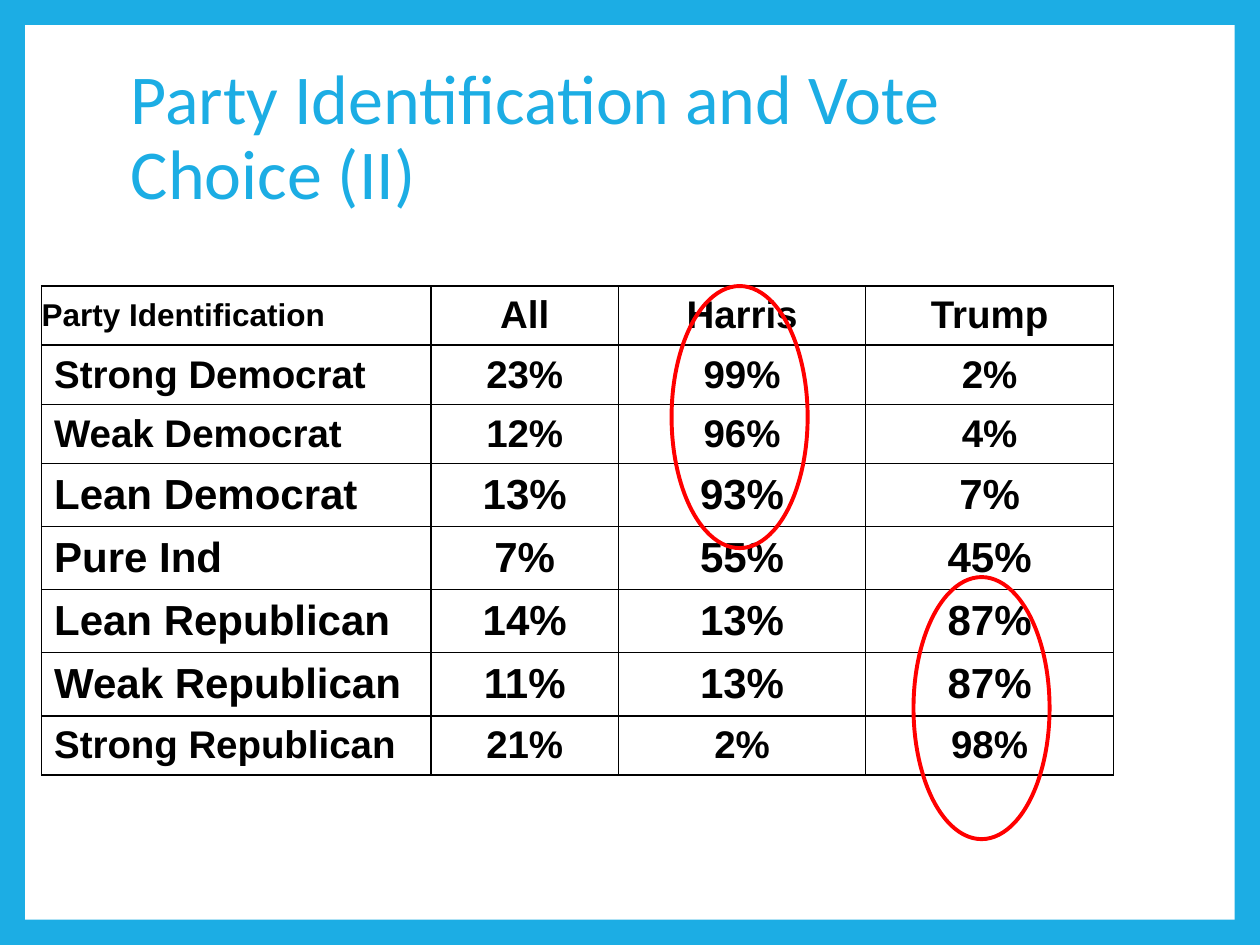
from lxml import etree
from pptx import Presentation
from pptx import util as u
from pptx.dml.color import RGBColor
from pptx.enum import shapes, text
from pptx.oxml.ns import qn

BLUE, WHITE, BLACK, RED = "1CADE4", "FFFFFF", "000000", "FF0000"

COLUMN_WIDTHS = [3.09, 1.49, 1.96, 1.97]
# Label, all voters, Harris, Trump, text size, row height
VOTE_ROWS = [
    ("Party Identification", "All", "Harris", "Trump", 22, 0.47),
    ("Strong Democrat", "23%", "99%", "2%", 22, 0.47),
    ("Weak Democrat", "12%", "96%", "4%", 22, 0.47),
    ("Lean Democrat", "13%", "93%", "7%", 24, 0.5),
    ("Pure Ind", "7%", "55%", "45%", 24, 0.5),
    ("Lean Republican", "14%", "13%", "87%", 24, 0.5),
    ("Weak Republican", "11%", "13%", "87%", 24, 0.5),
    ("Strong Republican", "21%", "2%", "98%", 22, 0.47),
]


def color(hex_string):
    return RGBColor.from_string(hex_string)


def inches(*lengths):
    return [u.Inches(length) for length in lengths]


class Deck:
    title_font, table_font = "Calibri", "Arial"

    def __init__(self, width, height):
        self.presentation = Presentation()
        self.presentation.slide_width = u.Inches(width)
        self.presentation.slide_height = u.Inches(height)
        self.slide = self.presentation.slides.add_slide(self.presentation.slide_layouts[6])

    def background(self, fill):
        self.slide.background.fill.solid()
        self.slide.background.fill.fore_color.rgb = color(fill)

    def panel(self, fill, *box):
        panel = self.slide.shapes.add_shape(shapes.MSO_SHAPE.RECTANGLE, *inches(*box))
        panel.shadow.inherit = False
        panel.fill.solid()
        panel.fill.fore_color.rgb = color(fill)
        panel.line.fill.background()

    def title(self, wording, *box):
        frame = self.slide.shapes.add_textbox(*inches(*box)).text_frame
        frame.word_wrap = True
        frame.vertical_anchor = text.MSO_ANCHOR.MIDDLE
        frame.margin_bottom = u.Inches(0.66)  # lifts the title by half a line
        heading = frame.paragraphs[0]
        heading.text = wording
        heading.line_spacing = 0.9
        self.style(heading.font, self.title_font, 40, BLUE)

    def style(self, font, name, size, hex_string, bold=False):
        font.name, font.size, font.bold = name, u.Pt(size), bold
        font.color.rgb = color(hex_string)

    def cell(self, cell, wording, size, centred):
        cell.vertical_anchor = text.MSO_ANCHOR.MIDDLE
        cell.text = wording
        entry = cell.text_frame.paragraphs[0]
        entry.alignment = text.PP_ALIGN.CENTER if centred else text.PP_ALIGN.LEFT
        self.style(entry.font, self.table_font, size, BLACK, bold=True)
        # Hanging indent
        properties = entry._p.get_or_add_pPr()
        properties.set("marL", str(u.Inches(0.38)))
        properties.set("indent", str(-u.Inches(0.38)))
        # Borders come before the fill in the cell properties
        cell_properties = cell._tc.get_or_add_tcPr()
        for side in ("lnL", "lnR", "lnT", "lnB"):
            border = etree.SubElement(cell_properties, qn(f"a:{side}"), w=str(u.Pt(1)))
            fill = etree.SubElement(border, qn("a:solidFill"))
            etree.SubElement(fill, qn("a:srgbClr"), val=BLACK)
        cell.fill.background()

    def table(self, rows, widths, left, top):
        heights = [row[-1] for row in rows]
        box = inches(left, top, sum(widths), sum(heights))
        table = self.slide.shapes.add_table(len(rows), len(widths), *box).table
        table.first_row = table.horz_banding = False
        for column, width in zip(table.columns, widths):
            column.width = u.Inches(width)
        for r, (*entries, size, height) in enumerate(rows):
            table.rows[r].height = u.Inches(height)
            for c, entry in enumerate(entries):
                self.cell(table.cell(r, c), entry, size, centred=c > 0)
        return table

    def ring(self, left, top):
        ring = self.slide.shapes.add_shape(shapes.MSO_SHAPE.OVAL, *inches(left, top, 1.08, 2.08))
        ring.shadow.inherit = False
        ring.fill.background()
        ring.line.color.rgb = color(RED)
        ring.line.width = u.Pt(2.25)


def main():
    deck = Deck(10, 7.5)

    # Blue frame around a white page
    deck.background(BLUE)
    deck.panel(WHITE, 0.2, 0.2, 9.6, 7.1)

    deck.title("Party Identification and Vote Choice (II)", 0.94, 0.67, 8.1, 1.48)

    # Vote by party identification, with a smaller flush corner label
    votes = deck.table(VOTE_ROWS, COLUMN_WIDTHS, 0.33, 2.27)
    corner = votes.cell(0, 0)
    corner.margin_left = corner.margin_right = 0
    corner.text_frame.paragraphs[0].font.size = u.Pt(18)

    # Rings around each party's loyal voters
    deck.ring(7.25, 4.58)
    deck.ring(5.33, 2.27)

    deck.presentation.save("out.pptx")


if __name__ == "__main__":
    main()
